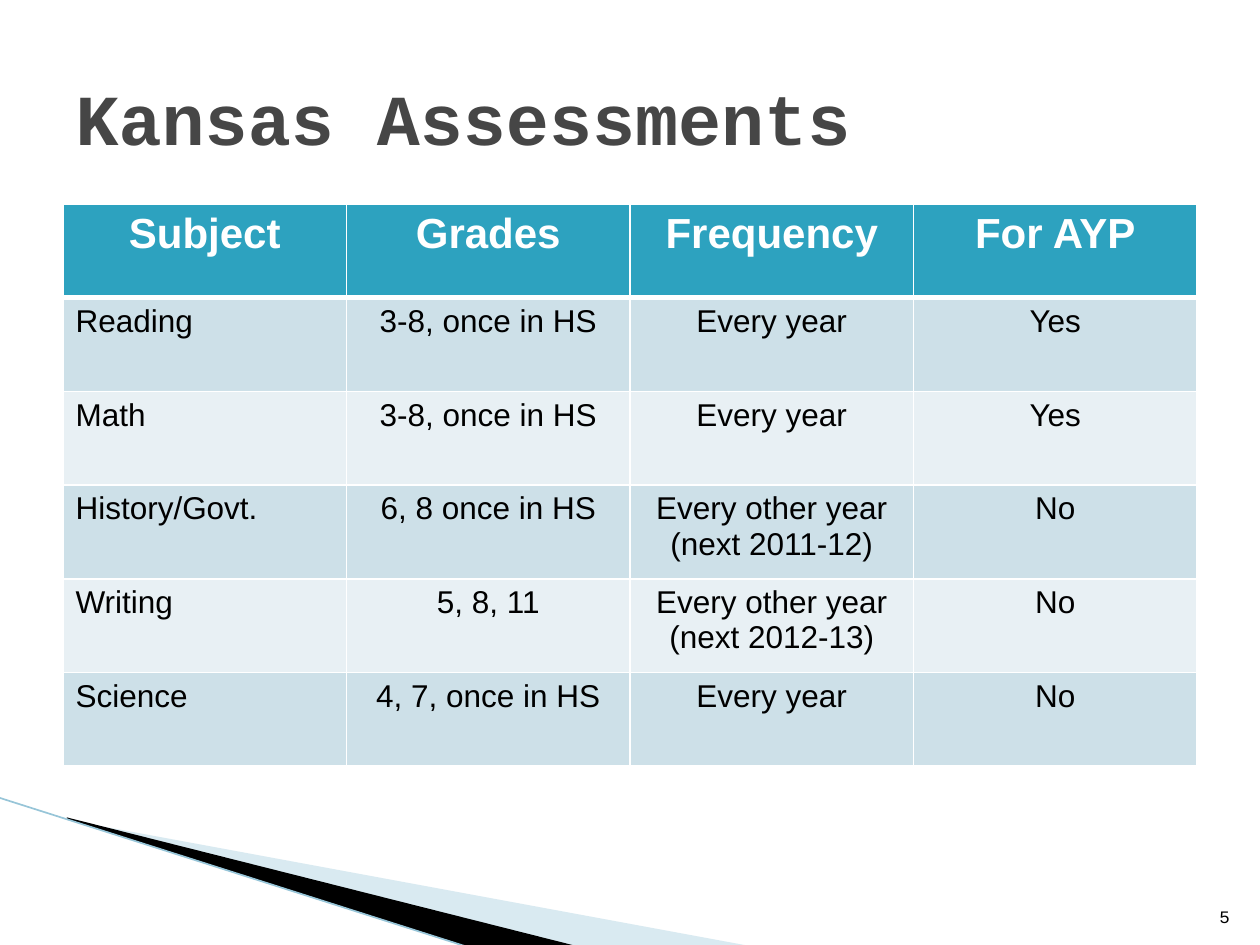
"""Build the Kansas Assessments slide: a title, a schedule table and a wedge ornament."""
import dataclasses

import lxml.etree
import pptx
import pptx.dml.color
import pptx.enum.text
import pptx.oxml.ns
import pptx.util

WIDTH = pptx.util.Inches(10)
HEIGHT = pptx.util.Inches(7.5)
THOUSANDTH = (WIDTH / 1000, HEIGHT / 1000)
ALIGN = pptx.enum.text.PP_ALIGN
ANCHOR = pptx.enum.text.MSO_ANCHOR
QN = pptx.oxml.ns.qn


@dataclasses.dataclass(frozen=True)
class Style:
    size: float
    font: str
    color: str
    bold: bool = False


@dataclasses.dataclass(frozen=True)
class Box:
    left: float
    top: float
    width: float
    height: float

    def lengths(self) -> tuple:
        return (int(self.left * WIDTH), int(self.top * HEIGHT),
                int(self.width * WIDTH), int(self.height * HEIGHT))


@dataclasses.dataclass(frozen=True)
class Wedge:
    points: tuple
    color: str
    opacity: int = 100


@dataclasses.dataclass(frozen=True)
class Assessment:
    subject: str
    grades: str
    frequency: str
    for_ayp: str


TITLE = Style(41, "Courier New", "464646", True)
HEADING = Style(24, "Arial", "FFFFFF", True)
ENTRY = Style(18, "Arial", "000000")
PAGE_NUMBER = Style(10, "Courier New", "000000")

TITLE_BOX = Box(0.05, 0.04, 0.9, 0.1667)
TABLE_BOX = Box(0.05, 0.216, 0.9, 0.5947)
PAGE_BOX = Box(0.946, 0.9347, 0.04, 0.0533)

HEADING_FILL = "2DA2BF"
BAND_FILLS = ("E8F0F4", "CDE0E8")

SCHEDULE = (
    Assessment("Subject", "Grades", "Frequency", "For AYP"),
    Assessment("Reading", "3-8, once in HS", "Every year", "Yes"),
    Assessment("Math", "3-8, once in HS", "Every year", "Yes"),
    Assessment("History/Govt.", "6, 8 once in HS", "Every other year\n(next 2011-12)", "No"),
    Assessment("Writing", "5, 8, 11", "Every other year\n(next 2012-13)", "No"),
    Assessment("Science", "4, 7, once in HS", "Every year", "No"),
)

WEDGES = (
    Wedge(((55, 868), (595, 1001), (456, 1001), (55, 867)), "A0CBDC", 40),
    Wedge(((53, 865), (457, 1001), (372, 1002), (54, 867)), "000000"),
)
EDGE = ((-1, 844), (371, 1002))


def rgb(value: str) -> pptx.dml.color.RGBColor:
    return pptx.dml.color.RGBColor.from_string(value)


def write(frame, text: str, style: Style, align) -> None:
    for index, line in enumerate(text.split("\n")):
        paragraph = frame.add_paragraph() if index else frame.paragraphs[0]
        paragraph.alignment = align
        run = paragraph.add_run()
        run.text = line
        run.font.size = pptx.util.Pt(style.size)
        run.font.name = style.font
        run.font.bold = style.bold
        run.font.color.rgb = rgb(style.color)


def draw_wedge(slide, wedge: Wedge) -> None:
    start, *rest = wedge.points
    builder = slide.shapes.build_freeform(*start, scale=THOUSANDTH)
    builder.add_line_segments(rest, close=True)
    shape = builder.convert_to_shape()
    shape.shadow.inherit = False
    shape.line.fill.background()
    shape.fill.solid()
    shape.fill.fore_color.rgb = rgb(wedge.color)
    if wedge.opacity < 100:
        color = shape.fill._xPr.find(".//" + QN("a:srgbClr"))
        lxml.etree.SubElement(color, QN("a:alpha"), val=str(wedge.opacity * 1000))


def draw_edge(slide) -> None:
    ends = [int(value * unit) for point in EDGE for value, unit in zip(point, THOUSANDTH)]
    edge = slide.shapes.add_connector(pptx.enum.shapes.MSO_CONNECTOR.STRAIGHT, *ends)
    edge.line.color.rgb = rgb("97C5D8")
    edge.line.width = pptx.util.Pt(0.95)
    lxml.etree.SubElement(edge._element.spPr, QN("a:effectLst"))


def add_borders(cell, bottom: float, top: float) -> None:
    properties = cell._tc.get_or_add_tcPr()
    widths = {"lnL": 1, "lnR": 1, "lnT": top, "lnB": bottom}
    for index, (side, width) in enumerate(widths.items()):
        border = lxml.etree.Element(QN("a:" + side), w=str(pptx.util.Pt(width)))
        fill = lxml.etree.SubElement(border, QN("a:solidFill"))
        lxml.etree.SubElement(fill, QN("a:srgbClr"), val="FFFFFF")
        properties.insert(index, border)


def draw_schedule(slide) -> None:
    columns = len(dataclasses.fields(Assessment))
    table = slide.shapes.add_table(len(SCHEDULE), columns, *TABLE_BOX.lengths()).table
    for row, assessment in enumerate(SCHEDULE):
        heading = row == 0
        for column, text in enumerate(dataclasses.astuple(assessment)):
            cell = table.cell(row, column)
            cell.fill.solid()
            cell.fill.fore_color.rgb = rgb(HEADING_FILL if heading else BAND_FILLS[row % 2])
            add_borders(cell, bottom=3 if heading else 1, top=3 if row == 1 else 1)
            align = ALIGN.CENTER if heading or column else ALIGN.LEFT
            write(cell.text_frame, text, HEADING if heading else ENTRY, align)


def draw_title(slide) -> None:
    title = slide.shapes.title
    title.left, title.top, title.width, title.height = TITLE_BOX.lengths()
    title.text_frame.vertical_anchor = ANCHOR.MIDDLE
    write(title.text_frame, "Kansas Assessments", TITLE, ALIGN.LEFT)


def draw_page_number(slide) -> None:
    frame = slide.shapes.add_textbox(*PAGE_BOX.lengths()).text_frame
    frame.word_wrap = True
    frame.vertical_anchor = ANCHOR.BOTTOM
    write(frame, "5", PAGE_NUMBER, ALIGN.RIGHT)


def main() -> None:
    presentation = pptx.Presentation()
    presentation.slide_width, presentation.slide_height = WIDTH, HEIGHT
    slide = presentation.slides.add_slide(presentation.slide_layouts.get_by_name("Title Only"))
    for wedge in WEDGES:
        draw_wedge(slide, wedge)
    draw_edge(slide)
    draw_schedule(slide)
    draw_title(slide)
    draw_page_number(slide)
    presentation.save("out.pptx")


if __name__ == "__main__":
    import pptx.enum.shapes
    main()
